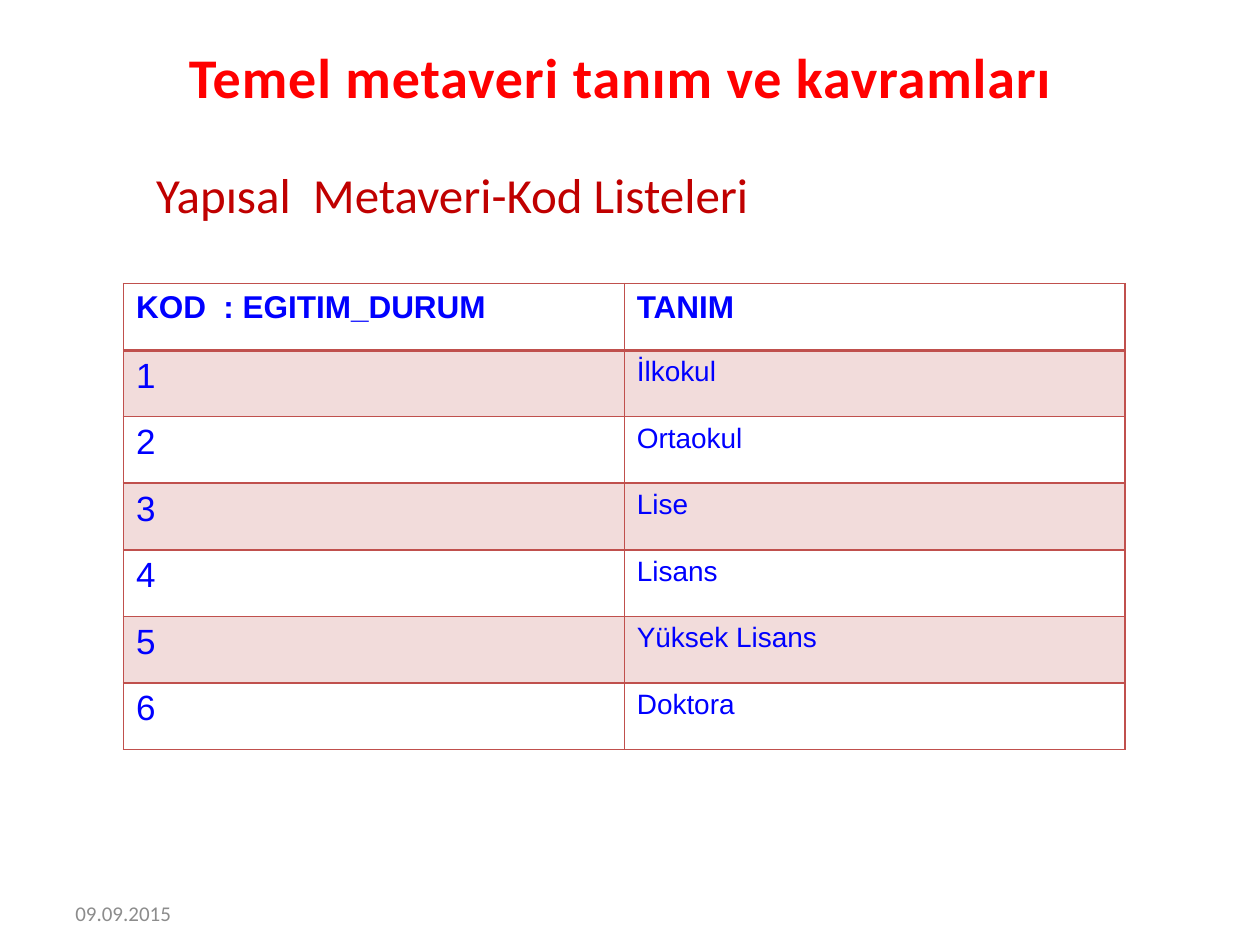
from lxml import etree
from pptx import Presentation
from pptx import util as u
from pptx.dml.color import RGBColor
from pptx.enum import text
from pptx.oxml.ns import qn

ACCENT = "C0504D"
BAND = "F2DCDB"
BLUE = "0000FF"
ROWS = [
    ("KOD  : EGITIM_DURUM", "TANIM"),
    ("1", "İlkokul"),
    ("2", "Ortaokul"),
    ("3", "Lise"),
    ("4", "Lisans"),
    ("5", "Yüksek Lisans"),
    ("6", "Doktora"),
]


def color(value):
    """Turn a hex string into a colour."""
    return RGBColor.from_string(value)


def write(tf, words, hue, align=text.PP_ALIGN.LEFT, **fmt):
    """Write one formatted paragraph and return its run."""
    p = tf.paragraphs[0]
    p.alignment = align
    r = p.add_run()
    r.text = words
    for name, value in fmt.items():
        setattr(r.font, name, value)
    r.font.color.rgb = color(hue)
    return r


def place(sp, box):
    """Move a shape to a box given in inches."""
    for name, value in zip(("left", "top", "width", "height"), box):
        setattr(sp, name, u.Inches(value))


def add_title(s, box, words):
    """Fill the title placeholder."""
    sp = s.shapes.title
    place(sp, box)
    sp.text_frame.vertical_anchor = text.MSO_ANCHOR.TOP
    r = write(sp.text_frame, words, "FF0000", text.PP_ALIGN.CENTER,
              name="Calibri", size=u.Pt(32), bold=True)
    r.font._element.set("spc", "50")


def add_label(s, box, words, hue, size):
    """Add a vertically centred line of text."""
    tf = s.shapes.add_textbox(*map(u.Inches, box)).text_frame
    tf.word_wrap = True
    tf.vertical_anchor = text.MSO_ANCHOR.MIDDLE
    write(tf, words, hue, name="Calibri", size=u.Pt(size))


def set_borders(cell, **widths):
    """Draw the cell's sides with widths in points."""
    tcPr = cell._tc.get_or_add_tcPr()
    for side, width in widths.items():
        ln = etree.SubElement(tcPr, qn(f"a:ln{side}"), w=str(u.Pt(width)))
        fill = etree.SubElement(ln, qn("a:solidFill"))
        etree.SubElement(fill, qn("a:srgbClr"), val=ACCENT)


def add_code_table(s, box, rows):
    """Add the code list with a bold header and banded rows."""
    table = s.shapes.add_table(len(rows), 2, *map(u.Inches, box)).table
    table.first_row = table.horz_banding = False
    for i, row in enumerate(rows):
        table.rows[i].height = u.Inches(box[3] / len(rows))
        for j, words in enumerate(row):
            cell = table.cell(i, j)
            size = 18 if i == 0 else (20, 16)[j]
            write(cell.text_frame, words, BLUE, name="Arial",
                  size=u.Pt(size), bold=i == 0)
            set_borders(cell, L=1, R=1, T=2 if i == 1 else 1, B=2 if i == 0 else 1)
            if i % 2:
                cell.fill.solid()
                cell.fill.fore_color.rgb = color(BAND)
            else:
                cell.fill.background()


def main():
    """Build and save the slide."""
    prs = Presentation()
    prs.slide_width, prs.slide_height = u.Inches(10), u.Inches(7.5)
    s = prs.slides.add_slide(prs.slide_layouts[5])
    add_title(s, (1.06, 0.29, 7.73, 0.87), "Temel metaveri tanım ve kavramları")
    add_label(s, (1.14, 1.18, 8.8, 0.71), "Yapısal  Metaveri-Kod Listeleri", "C00000", 28)
    add_code_table(s, (0.98, 2.25, 7.95, 3.7), ROWS)
    add_label(s, (0.5, 7.05, 2.33, 0.4), "09.09.2015", "8C8C8C", 12)
    prs.save("out.pptx")


if __name__ == "__main__":
    main()
